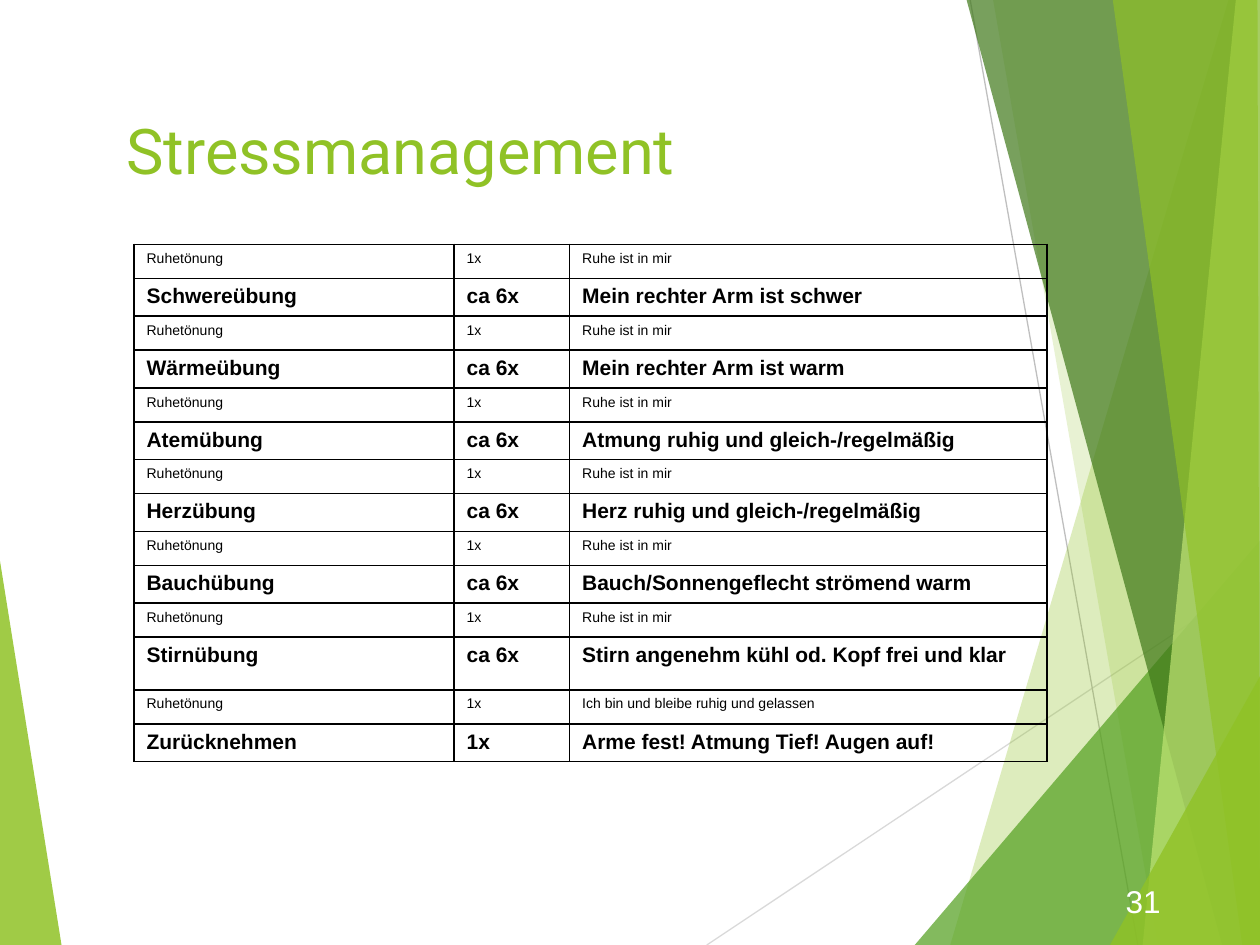
from dataclasses import dataclass

from lxml.etree import SubElement
from pptx import Presentation
from pptx.dml.color import RGBColor
from pptx.enum.shapes import MSO_CONNECTOR
from pptx.enum.text import MSO_ANCHOR, PP_ALIGN
from pptx.oxml.ns import qn
from pptx.util import Pt


@dataclass(frozen=True)
class Theme:
    lime: str = "90C226"
    pale_lime: str = "C0E474"
    green: str = "54A021"
    dark_green: str = "3F7819"
    light_gray: str = "D9D9D9"
    gray: str = "BFBFBF"
    black: str = "000000"
    white: str = "FFFFFF"
    title_font: str = "Roboto"
    body_font: str = "Arial"
    title_size: int = 36
    number_size: int = 18
    exercise_size: int = 12
    calm_size: int = 8


THEME = Theme()
LEFT, TOP, RIGHT, BOTTOM = -0.7, -0.7, 720.7, 540

LEFT_WEDGE = (THEME.lime, 85, [(LEFT, 316), (35.3, 540.7), (LEFT, BOTTOM)])
RIGHT_PANES = [
    (THEME.lime, 30, [(702, 0), (543, BOTTOM), (RIGHT, BOTTOM), (RIGHT, 0)]),
    (THEME.lime, 20, [(567.4, TOP), (661.7, BOTTOM), (RIGHT, BOTTOM), (RIGHT, TOP)]),
    (THEME.green, 72, [(522.7, BOTTOM), (720, 308.9), (RIGHT, BOTTOM)]),
    (THEME.dark_green, 70, [(552.2, TOP), (698.4, BOTTOM), (RIGHT, BOTTOM), (RIGHT, TOP)]),
    (THEME.pale_lime, 70, [(706.3, TOP), (653, BOTTOM), (RIGHT, BOTTOM), (720, TOP)]),
    (THEME.lime, 65, [(635.8, TOP), (709.9, BOTTOM), (720, BOTTOM), (718.6, TOP)]),
    (THEME.lime, 80, [(634.3, BOTTOM), (RIGHT, 385.2), (RIGHT, BOTTOM)]),
]

CALM = ("Ruhetönung", "1x", "Ruhe ist in mir")
FINAL_CALM = ("Ruhetönung", "1x", "Ich bin und bleibe ruhig und gelassen")
EXERCISES = [
    ("Schwereübung", "ca 6x", "Mein rechter Arm ist schwer"),
    ("Wärmeübung", "ca 6x", "Mein rechter Arm ist warm"),
    ("Atemübung", "ca 6x", "Atmung ruhig und gleich-/regelmäßig"),
    ("Herzübung", "ca 6x", "Herz ruhig und gleich-/regelmäßig"),
    ("Bauchübung", "ca 6x", "Bauch/Sonnengeflecht strömend warm"),
    ("Stirnübung", "ca 6x", "Stirn angenehm kühl od. Kopf frei und klar"),
    ("Zurücknehmen", "1x", "Arme fest! Atmung Tief! Augen auf!"),
]
COLUMN_WIDTHS = (182.9, 66, 272.9)
CALM_HEIGHT, EXERCISE_HEIGHT, FOREHEAD_HEIGHT = 19.4, 21.6, 30.2


def rgb(color):
    return RGBColor.from_string(color)


def style_text(paragraph, font, size, color, bold=False):
    paragraph.font.name = font
    paragraph.font.size = Pt(size)
    paragraph.font.bold = bold
    paragraph.font.color.rgb = rgb(color)


def add_pane(slide, color, opacity, corners):
    points = [(Pt(x), Pt(y)) for x, y in corners]
    builder = slide.shapes.build_freeform(*points[0], scale=1.0)
    builder.add_line_segments(points[1:], close=True)
    pane = builder.convert_to_shape()
    pane.shadow.inherit = False
    pane.line.fill.background()
    pane.fill.solid()
    pane.fill.fore_color.rgb = rgb(color)
    tint = pane._element.spPr.find(".//" + qn("a:srgbClr"))
    SubElement(tint, qn("a:alpha"), val=str(opacity * 1000))


def add_ray(slide, start, end, color):
    ends = [Pt(value) for value in (*start, *end)]
    ray = slide.shapes.add_connector(MSO_CONNECTOR.STRAIGHT, *ends)
    ray.line.color.rgb = rgb(color)
    ray.line.width = Pt(0.75)
    SubElement(ray._element.spPr, qn("a:effectLst"))


def add_background(slide):
    add_pane(slide, *LEFT_WEDGE)
    add_ray(slide, (403.9, 540), (720.7, 329), THEME.light_gray)
    add_ray(slide, (554.4, 0), (650.2, 540), THEME.gray)
    for pane in RIGHT_PANES:
        add_pane(slide, *pane)


def add_title(slide, text):
    title = slide.shapes.title
    title.left, title.top, title.width, title.height = Pt(65), Pt(60), Pt(655), Pt(90)
    frame = title.text_frame
    frame.text = text
    frame.word_wrap = True
    frame.vertical_anchor = MSO_ANCHOR.TOP
    frame.paragraphs[0].alignment = PP_ALIGN.LEFT
    style_text(frame.paragraphs[0], THEME.title_font, THEME.title_size, THEME.lime)


def add_page_number(slide, number):
    frame = slide.shapes.add_textbox(Pt(508.3), Pt(500.4), Pt(162), Pt(28.8)).text_frame
    frame.text = str(number)
    frame.word_wrap = True
    frame.vertical_anchor = MSO_ANCHOR.MIDDLE
    frame.paragraphs[0].alignment = PP_ALIGN.RIGHT
    style_text(frame.paragraphs[0], THEME.body_font, THEME.number_size, THEME.white)


def add_borders(cell):
    properties = cell._tc.get_or_add_tcPr()
    for side in ("lnL", "lnR", "lnT", "lnB"):
        border = SubElement(properties, qn(f"a:{side}"), w=str(Pt(1)))
        fill = SubElement(border, qn("a:solidFill"))
        SubElement(fill, qn("a:srgbClr"), val=THEME.black)


def fill_cell(cell, text, size, bold):
    add_borders(cell)
    cell.fill.background()
    cell.text = text
    style_text(cell.text_frame.paragraphs[0], THEME.body_font, size, THEME.black, bold)


def add_exercise_table(slide):
    rows = []
    for exercise in EXERCISES:
        is_last = exercise is EXERCISES[-1]
        is_forehead = exercise[0] == "Stirnübung"
        rows.append((FINAL_CALM if is_last else CALM, CALM_HEIGHT, THEME.calm_size, False))
        height = FOREHEAD_HEIGHT if is_forehead else EXERCISE_HEIGHT
        rows.append((exercise, height, THEME.exercise_size, True))
    total_height = sum(height for _, height, _, _ in rows)
    table = slide.shapes.add_table(
        len(rows), len(COLUMN_WIDTHS),
        Pt(76.6), Pt(139.7), Pt(sum(COLUMN_WIDTHS)), Pt(total_height),
    ).table
    table.first_row = False
    table.horz_banding = False
    for column, width in zip(table.columns, COLUMN_WIDTHS):
        column.width = Pt(width)
    for row, (texts, height, size, bold) in zip(table.rows, rows):
        row.height = Pt(height)
        for cell, text in zip(row.cells, texts):
            fill_cell(cell, text, size, bold)


def main():
    presentation = Presentation()
    presentation.slide_width = Pt(720)
    presentation.slide_height = Pt(540)
    slide = presentation.slides.add_slide(presentation.slide_layouts[5])
    add_background(slide)
    add_exercise_table(slide)
    add_page_number(slide, 31)
    add_title(slide, "Stressmanagement")
    presentation.save("out.pptx")


if __name__ == "__main__":
    main()
